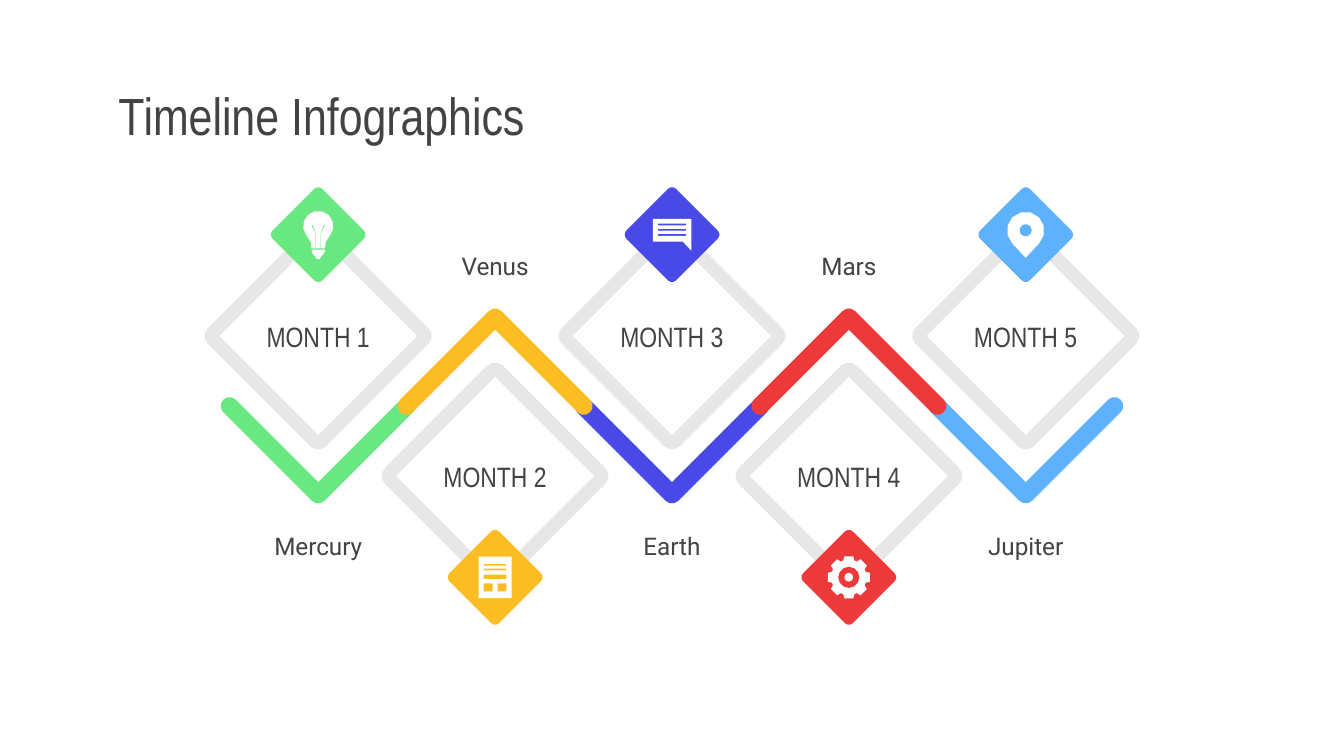
import math
from dataclasses import dataclass

from pptx import Presentation
from pptx import util as u
from pptx.dml.color import RGBColor
from pptx.enum import shapes, text


@dataclass(frozen=True)
class Theme:
    ink: str = "434343"
    white: str = "FFFFFF"
    frame: str = "E7E7E7"
    green: str = "69E781"
    yellow: str = "FCBD24"
    indigo: str = "4949E7"
    red: str = "EC3A3B"
    blue: str = "5EB2FC"
    heading_font: str = "Arial Narrow"
    body_font: str = "Roboto"
    title_size: float = 28
    month_size: float = 15
    label_size: float = 13


@dataclass(frozen=True)
class Box:
    left: float
    top: float
    width: float
    height: float

    @property
    def centre(self):
        return self.left + self.width / 2, self.top + self.height / 2

    def lengths(self):
        return [u.Pt(v) for v in (self.left, self.top, self.width, self.height)]


THEME = Theme()


# Geometry: outlines are lists of points around a centre, y pointing down
def arc(x, y, radius, start, end):
    steps = math.ceil((end - start) / 30)
    angles = [math.radians(start + (end - start) * i / steps) for i in range(steps + 1)]
    return [(x + radius * math.cos(a), y + radius * math.sin(a)) for a in angles]


def circle(x, y, radius):
    return arc(x, y, radius, 0, 360)[:-1]


def rectangle(left, top, right, bottom):
    return [(left, top), (right, top), (right, bottom), (left, bottom)]


def rounded_diamond(half, radius):
    reach = half - radius
    points = []
    for angle in (0, 90, 180, 270):
        x = reach * math.cos(math.radians(angle))
        y = reach * math.sin(math.radians(angle))
        points += arc(x, y, radius, angle - 45, angle + 45)
    return points


def chevron(reach, radius, sign):
    points = arc(-reach, 0, radius, 135, 315)
    points.append((0, reach - radius * math.sqrt(2)))
    points += arc(reach, 0, radius, -135, 45) + arc(0, reach, radius, 45, 135)
    return [(x, sign * y) for x, y in points]


# Drawing helpers
def paint(shape, color):
    shape.shadow.inherit = False
    shape.fill.solid()
    shape.fill.fore_color.rgb = RGBColor.from_string(color)
    shape.line.fill.background()


def draw_outline(slide, centre, contours, color):
    """Draw closed contours; those inside another become holes."""
    builder = None
    for contour in contours:
        points = [(u.Pt(centre[0] + x), u.Pt(centre[1] + y)) for x, y in contour]
        if builder is None:
            builder = slide.shapes.build_freeform(*points[0], scale=1.0)
        else:
            builder.move_to(*points[0])
        builder.add_line_segments(points[1:], close=True)
    paint(builder.convert_to_shape(), color)


def write(shape, words, *, font, size, align=text.PP_ALIGN.CENTER, wrap=True, inset=7.2):
    frame = shape.text_frame
    frame.word_wrap = wrap
    frame.auto_size = text.MSO_AUTO_SIZE.NONE
    frame.vertical_anchor = text.MSO_ANCHOR.MIDDLE
    frame.margin_left = frame.margin_right = u.Pt(inset)
    frame.margin_top = frame.margin_bottom = u.Pt(inset)
    paragraph = frame.paragraphs[0]
    paragraph.alignment = align
    run = paragraph.add_run()
    run.text = words
    run.font.name = font
    run.font.size = u.Pt(size)
    run.font.color.rgb = RGBColor.from_string(THEME.ink)


# Icons: each returns a list of shapes, each shape a list of contours
def bulb_icon():
    glass = arc(0, -4.6, 8.1, 140, 400) + [(4, 4), (3.6, 7.4), (-3.6, 7.4), (-4, 4)]
    filaments = [[(s * 3.7, -5.2), (s * 2.9, -5), (s * 1.1, -0.5), (s * 1.1, 7.4),
                  (s * 1.4, 7.4), (s * 1.4, -0.5)] for s in (-1, 1)]
    base = [(-2.6, 10.7), (-3.6, 9), (-3.6, 8.1), (3.6, 8.1), (3.6, 9), (2.6, 10.7)]
    base += arc(0, 11.6, 1.6, 0, 180)
    return [[glass] + filaments, [base]]


def page_icon():
    lines = [rectangle(-6.1, top, 6.1, bottom)
             for top, bottom in ((-7.2, -6.3), (-4.6, -3.7), (-1.4, 1))]
    blocks = [rectangle(left, 3.2, left + 4.8, 7.6) for left in (-6.1, 1.3)]
    return [[rectangle(-8.8, -11.1, 8.8, 11.1)] + lines + blocks]


def chat_icon():
    bubble = [(-10.3, -8.4), (10.3, -8.4), (10.3, 8.6), (5.8, 3.8), (-10.3, 3.8)]
    lines = [rectangle(-7.6, y - 0.5, 7.6, y + 0.5) for y in (-5.4, -2.6, 0.2)]
    return [[bubble] + lines]


def gear_icon():
    wheel = []
    for tooth in range(0, 360, 45):
        wheel += arc(0, 0, 11.5, tooth - 12, tooth + 12)
        wheel += arc(0, 0, 9.5, tooth + 18, tooth + 27)
    return [[wheel, circle(0, 0, 5.7)], [circle(0, 0, 2.3)]]


def pin_icon():
    drop = arc(0, -2.2, 10, 135, 405) + [(0, 12.4)]
    return [[drop, circle(0, -2.3, 3.3)]]


# Regions
def place_title(slide, box, words):
    title = slide.shapes.title
    title.left, title.top, title.width, title.height = box.lengths()
    write(title, words, font=THEME.heading_font, size=THEME.title_size,
          align=text.PP_ALIGN.LEFT)


def place_month(slide, box, sign, month, label, color, icon):
    """One month; sign is 1 when its chevron points down, -1 when up."""
    x, y = box.centre
    draw_outline(slide, (x, y), [chevron(47.5, 4.75, sign)], color)

    # Month diamond: grey frame around a white middle
    diamond_y = y - sign * 37.5
    draw_outline(slide, (x, diamond_y), [rounded_diamond(box.width / 2, 6)], THEME.frame)
    half = 53
    middle = slide.shapes.add_shape(
        shapes.MSO_SHAPE.DIAMOND,
        *Box(x - half, diamond_y - half, 2 * half, 2 * half).lengths())
    paint(middle, THEME.white)
    write(middle, month, font=THEME.heading_font, size=THEME.month_size,
          wrap=False, inset=0)

    # Badge with icon at the outer end of the box
    badge_half = 25.4
    badge = (x, y - sign * (box.height / 2 - badge_half))
    draw_outline(slide, badge, [rounded_diamond(badge_half, 3)], color)
    for contours in icon():
        draw_outline(slide, badge, contours, THEME.white)

    # Label beyond the chevron's tip
    caption = slide.shapes.add_textbox(*Box(x - 41.5, y + sign * 75 - 17, 83, 34).lengths())
    write(caption, label, font=THEME.body_font, size=THEME.label_size)


def place_timeline(slide, box, months):
    width = 121.6
    step = (box.width - width) / (len(months) - 1)
    # Upper months lie behind the lower ones
    order = list(range(0, len(months), 2)) + list(range(1, len(months), 2))
    for index in order:
        month_box = Box(box.left + index * step, box.top, width, box.height)
        sign = 1 if index % 2 == 0 else -1
        place_month(slide, month_box, sign, f"MONTH {index + 1}", *months[index])


def main():
    presentation = Presentation()
    presentation.slide_width, presentation.slide_height = u.Pt(720), u.Pt(405)
    slide = presentation.slides.add_slide(presentation.slide_layouts[5])
    place_title(slide, Box(56.2, 42.5, 608, 38), "Timeline Infographics")
    place_timeline(slide, Box(109.7, 100.3, 500.6, 234.4), [
        ("Mercury", THEME.green, bulb_icon),
        ("Venus", THEME.yellow, page_icon),
        ("Earth", THEME.indigo, chat_icon),
        ("Mars", THEME.red, gear_icon),
        ("Jupiter", THEME.blue, pin_icon),
    ])
    presentation.save("out.pptx")


if __name__ == "__main__":
    main()
